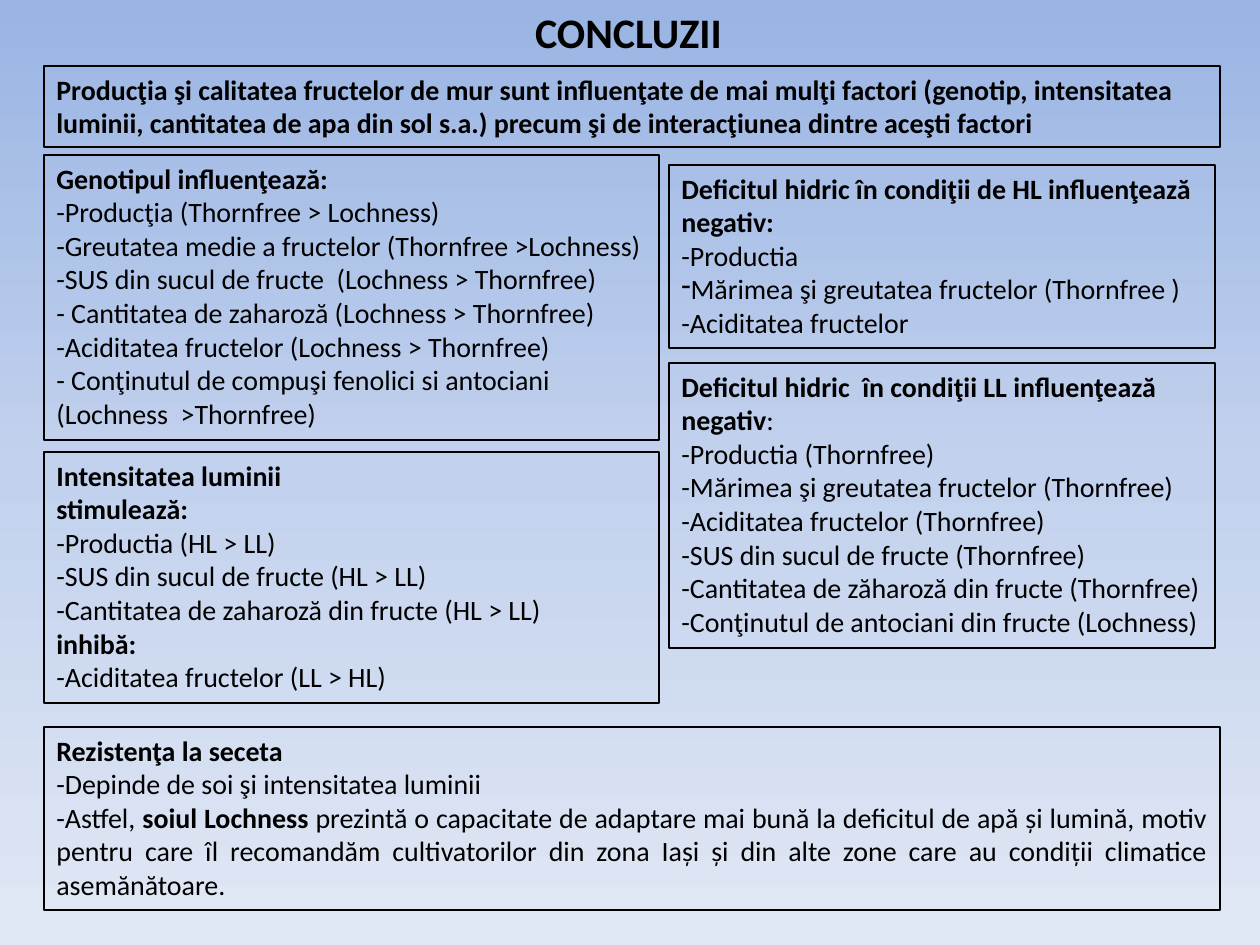
from copy import deepcopy

from lxml import etree
from pptx import Presentation
from pptx.dml.color import RGBColor
from pptx.enum import text
from pptx.oxml import ns
from pptx.util import Pt

PX = 914400 / 126
FONT = "Calibri"
BLACK = RGBColor(0x00, 0x00, 0x00)
SKY = [
    (0.0, RGBColor(0x9A, 0xB5, 0xE4)),
    (0.5, RGBColor(0xC2, 0xD1, 0xED)),
    (1.0, RGBColor(0xE1, 0xE8, 0xF5)),
]
LEFT, RIGHT = 44, 669
LEFT_WIDTH, RIGHT_WIDTH, FULL_WIDTH = 615, 546, 1176

INTRO = [
    "**Producţia şi calitatea fructelor de mur sunt influenţate de mai mulţi factori "
    "(genotip, intensitatea luminii, cantitatea de apa din sol s.a.) precum şi de "
    "interacţiunea dintre aceşti factori**",
]
GENOTYPE = [
    "**Genotipul influenţează:**",
    "-Producţia (Thornfree > Lochness)",
    "-Greutatea medie a fructelor (Thornfree >Lochness)",
    "-SUS din sucul de fructe  (Lochness > Thornfree)",
    "- Cantitatea de zaharoză (Lochness > Thornfree)",
    "-Aciditatea fructelor (Lochness > Thornfree)",
    "- Conţinutul de compuşi fenolici si antociani (Lochness  >Thornfree)",
]
LIGHT = [
    "**Intensitatea luminii**",
    "**stimulează:**",
    "-Productia (HL > LL)",
    "-SUS din sucul de fructe (HL > LL)",
    "-Cantitatea de zaharoză din fructe (HL > LL)",
    "**inhibă:**",
    "-Aciditatea fructelor (LL > HL)",
]
DEFICIT_HL = [
    "**Deficitul hidric în condiţii de HL influenţează negativ:**",
    "-Productia",
    "Mărimea şi greutatea fructelor (Thornfree )",
    "-Aciditatea fructelor",
]
DEFICIT_LL = [
    "**Deficitul hidric  în condiţii LL influenţează negativ**:",
    "-Productia (Thornfree)",
    "-Mărimea şi greutatea fructelor (Thornfree)",
    "-Aciditatea fructelor (Thornfree)",
    "-SUS din sucul de fructe (Thornfree)",
    "-Cantitatea de zăharoză din fructe (Thornfree)",
    "-Conţinutul de antociani din fructe (Lochness)",
]
DROUGHT = [
    "**Rezistenţa la seceta**",
    "-Depinde de soi şi intensitatea luminii",
    "-Astfel, **soiul Lochness **prezintă o capacitate de adaptare mai bună la deficitul "
    "de apă și lumină, motiv pentru care îl recomandăm cultivatorilor din zona Iași și din "
    "alte zone care au condiții climatice asemănătoare.",
]


def px(*lengths):
    return [round(length * PX) for length in lengths]


class SlideBuilder:
    """Holds the style and the current slide; text between ** marks is bold."""

    def __init__(self, presentation):
        self.slide = presentation.slides.add_slide(presentation.slide_layouts[5])

    def background(self, stops):
        fill = self.slide.background.fill
        fill.gradient()
        fill.gradient_angle = 270
        stop_list = self.slide.element.find(".//" + ns.qn("a:gsLst"))
        while len(stop_list) < len(stops):
            stop_list.append(deepcopy(stop_list[-1]))
        for stop, (position, color) in zip(fill.gradient_stops, stops):
            stop.position = position
            stop.color.rgb = color

    def add_runs(self, paragraph, marked, size):
        for index, part in enumerate(marked.split("**")):
            if part:
                run = paragraph.add_run()
                run.text = part
                run.font.name = FONT
                run.font.size = Pt(size)
                run.font.bold = index % 2 == 1
                run.font.color.rgb = BLACK

    def title(self, wording, left, top, width, height):
        shape = self.slide.shapes.title
        shape.left, shape.top, shape.width, shape.height = px(left, top, width, height)
        frame = shape.text_frame
        frame.auto_size = text.MSO_AUTO_SIZE.SHAPE_TO_FIT_TEXT
        frame.vertical_anchor = text.MSO_ANCHOR.TOP
        frame.paragraphs[0].alignment = text.PP_ALIGN.CENTER
        self.add_runs(frame.paragraphs[0], wording, 24)

    def panel(self, lines, left, top, width, height):
        shape = self.slide.shapes.add_textbox(*px(left, top, width, height))
        shape.line.color.rgb = BLACK
        shape.line.width = Pt(0.75)
        frame = shape.text_frame
        frame.word_wrap = True
        frame.auto_size = text.MSO_AUTO_SIZE.SHAPE_TO_FIT_TEXT
        for index, line in enumerate(lines):
            paragraph = frame.add_paragraph() if index else frame.paragraphs[0]
            self.add_runs(paragraph, line, 16)
        return frame.paragraphs

    def dash_bullet(self, paragraph):
        properties = paragraph._p.get_or_add_pPr()
        etree.SubElement(properties, ns.qn("a:buChar"), char="-")


def main():
    presentation = Presentation()
    presentation.slide_width, presentation.slide_height = px(1260, 945)
    builder = SlideBuilder(presentation)
    builder.background(SKY)
    builder.title("**CONCLUZII**", 25, 0, 1207, 63)
    builder.panel(INTRO, LEFT, 66, FULL_WIDTH, 81)
    builder.panel(GENOTYPE, LEFT, 155, LEFT_WIDTH, 285)
    builder.panel(LIGHT, LEFT, 452, LEFT_WIDTH, 251)
    deficit = builder.panel(DEFICIT_HL, RIGHT, 165, RIGHT_WIDTH, 183)
    builder.dash_bullet(deficit[2])
    builder.panel(DEFICIT_LL, RIGHT, 363, RIGHT_WIDTH, 285)
    drought = builder.panel(DROUGHT, LEFT, 727, FULL_WIDTH, 183)
    drought[-1].alignment = text.PP_ALIGN.JUSTIFY
    presentation.save("out.pptx")


if __name__ == "__main__":
    main()
